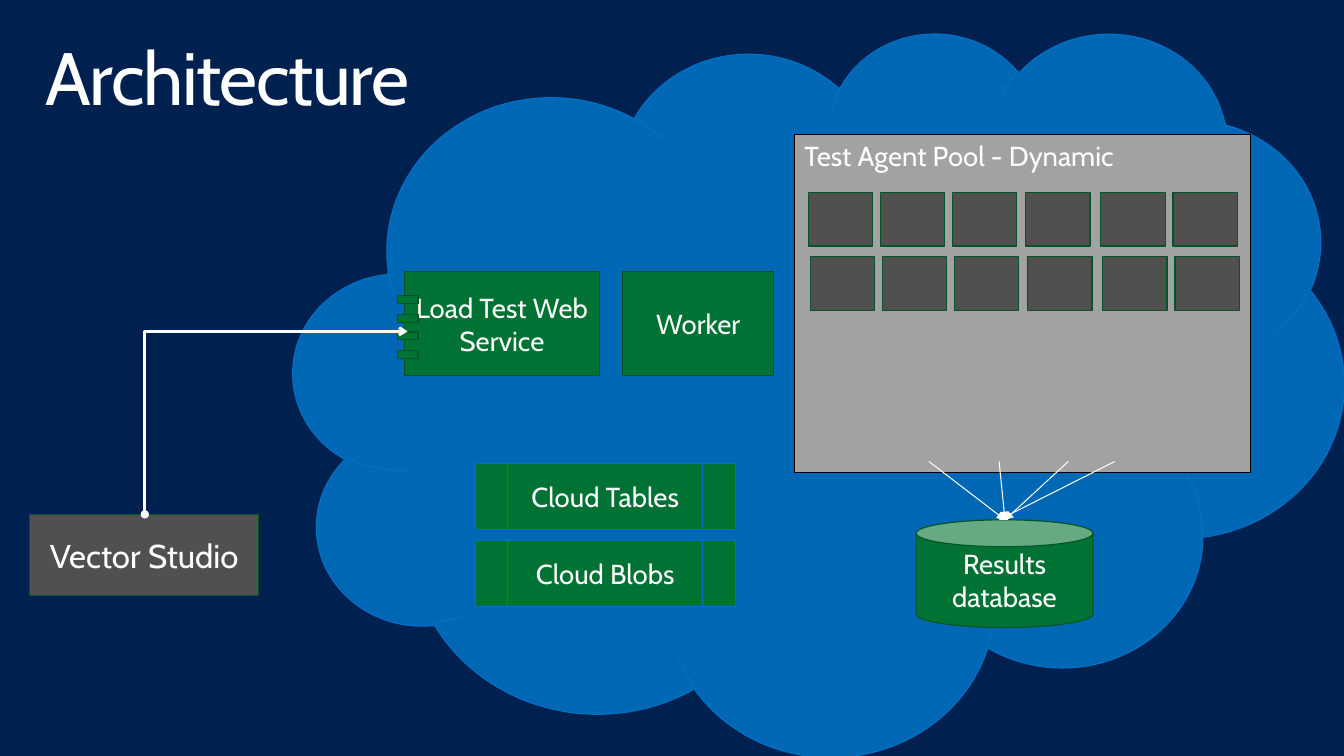
import pptx
import pptx.dml.color
import pptx.enum.shapes
import pptx.enum.text
import pptx.oxml.ns
import pptx.oxml.xmlchemy
import pptx.util
import lxml.etree

Inches = pptx.util.Inches
Pt = pptx.util.Pt
Shapes = pptx.enum.shapes.MSO_SHAPE
Connectors = pptx.enum.shapes.MSO_CONNECTOR
Align = pptx.enum.text.PP_ALIGN
Anchor = pptx.enum.text.MSO_ANCHOR
qn = pptx.oxml.ns.qn

NAVY, BLUE, BRIGHT_BLUE = "002050", "0067B4", "0072C6"
GREEN, DARK_GREEN = "007233", "005426"
CHARCOAL, GRAY, BLACK, WHITE = "505050", "A2A2A2", "000000", "FFFFFF"


def paint(color_format, color):
    color_format.rgb = pptx.dml.color.RGBColor.from_string(color)


def write(frame, text, size=20, color=WHITE, font="Cabin", align=Align.CENTER,
          anchor=Anchor.MIDDLE, spacing=None, tracking=None):
    frame.word_wrap = True
    frame.vertical_anchor = anchor
    para = frame.paragraphs[0]
    para.alignment = align
    if spacing:
        para.line_spacing = spacing
    span = para.add_run()
    span.text = text
    span.font.size = Pt(size)
    span.font.name = font
    paint(span.font.color, color)
    if tracking:
        span.font._element.set("spc", str(tracking))


class Diagram:
    """Draws styled elements on the current slide."""

    def __init__(self, deck, background):
        self.page = deck.slides.add_slide(deck.slide_layouts[5])
        fill = self.page.background.fill
        fill.solid()
        paint(fill.fore_color, background)

    def title(self, text, left, top, width, height):
        box = self.page.shapes.title
        box.left, box.top, box.width, box.height = map(Inches, (left, top, width, height))
        frame = box.text_frame
        frame.auto_size = pptx.enum.text.MSO_AUTO_SIZE.NONE
        frame.margin_left = frame.margin_right = Inches(0.16)
        frame.margin_top = frame.margin_bottom = Inches(0.1)
        write(frame, text, size=54, align=Align.LEFT, anchor=Anchor.TOP,
              spacing=0.9, tracking=-100)

    def block(self, left, top, width, height, text=None, kind=Shapes.RECTANGLE,
              fill=GREEN, line=DARK_GREEN, weight=0.85, **text_format):
        box = self.page.shapes.add_shape(kind, *map(Inches, (left, top, width, height)))
        box.shadow.inherit = False
        box.fill.solid()
        paint(box.fill.fore_color, fill)
        paint(box.line.color, line)
        box.line.width = Pt(weight)
        if text:
            write(box.text_frame, text, **text_format)
        return box

    def connector(self, start, end, weight, tail, head=None, kind=Connectors.STRAIGHT):
        link = self.page.shapes.add_connector(kind, *map(Inches, (*start, *end)))
        paint(link.line.color, WHITE)
        link.line.width = Pt(weight)
        outline = link.line._get_or_add_ln()
        for tag, style in (("a:headEnd", head), ("a:tailEnd", tail)):
            if style:
                lxml.etree.SubElement(outline, qn(tag)).set("type", style)
        lxml.etree.SubElement(link._element.spPr, qn("a:effectLst"))
        return link

    def turned_elbow(self, start, end, bend, **style):
        link = self.connector(start, end, kind=Connectors.ELBOW, **style)
        properties = link._element.spPr
        properties.find(qn("a:xfrm")).set("rot", str(90 * 60000))
        adjustments = properties.find(qn("a:prstGeom")).get_or_add_avLst()
        guide = lxml.etree.SubElement(adjustments, qn("a:gd"))
        guide.set("name", "adj1")
        guide.set("fmla", f"val {bend}")


def main():
    deck = pptx.Presentation()
    deck.slide_width, deck.slide_height = Inches(13.6), Inches(7.65)
    diagram = Diagram(deck, NAVY)
    diagram.title("Architecture", 0.3, 0.32, 13, 1)

    diagram.block(0.3, 5.21, 2.32, 0.82, "Vector Studio", fill=CHARCOAL, size=24)
    diagram.block(2.97, 0.32, 10.63, 7.32, kind=Shapes.CLOUD,
                  fill=BLUE, line=BRIGHT_BLUE, weight=0.75)

    diagram.block(4.09, 2.75, 1.98, 1.05, "Load Test Web Service")
    for port_top in (2.99, 3.18, 3.36, 3.55):
        diagram.block(4.02, port_top, 0.21, 0.08)
    diagram.block(6.3, 2.75, 1.53, 1.05, "Worker")

    diagram.block(8.04, 1.36, 4.61, 3.42, "Test Agent Pool - Dynamic", fill=GRAY,
                  line=BLACK, weight=0.75, align=Align.LEFT, anchor=Anchor.TOP)
    agent_columns = (8.18, 8.91, 9.64, 10.38, 11.14, 11.87)
    for row in range(2):
        for agent_left in agent_columns:
            diagram.block(agent_left + 0.02 * row, 1.95 + 0.65 * row, 0.65, 0.54,
                          fill=CHARCOAL)

    for store_top, store in ((4.69, "Cloud Tables"), (5.47, "Cloud Blobs")):
        diagram.block(4.81, store_top, 2.63, 0.67, store, line=BRIGHT_BLUE,
                      kind=Shapes.FLOWCHART_PREDEFINED_PROCESS, weight=0.75)

    database = diagram.block(9.27, 5.26, 1.79, 1.09, "Results database", kind=Shapes.CAN)
    frame = database.text_frame
    frame.margin_left = frame.margin_right = Inches(0.08)
    frame.margin_top = frame.margin_bottom = Inches(0.04)

    diagram.turned_elbow((3.72, 5.61), (1.87, 2.95), bend=100200,
                         weight=2, head="oval", tail="arrow")
    for agent_x, database_x in ((9.4, 10.17), (10.11, 10.17), (10.81, 10.17), (11.28, 10.11)):
        diagram.connector((agent_x, 4.67), (database_x, 5.26), weight=0.75, tail="triangle")

    deck.save("out.pptx")


if __name__ == "__main__":
    main()
